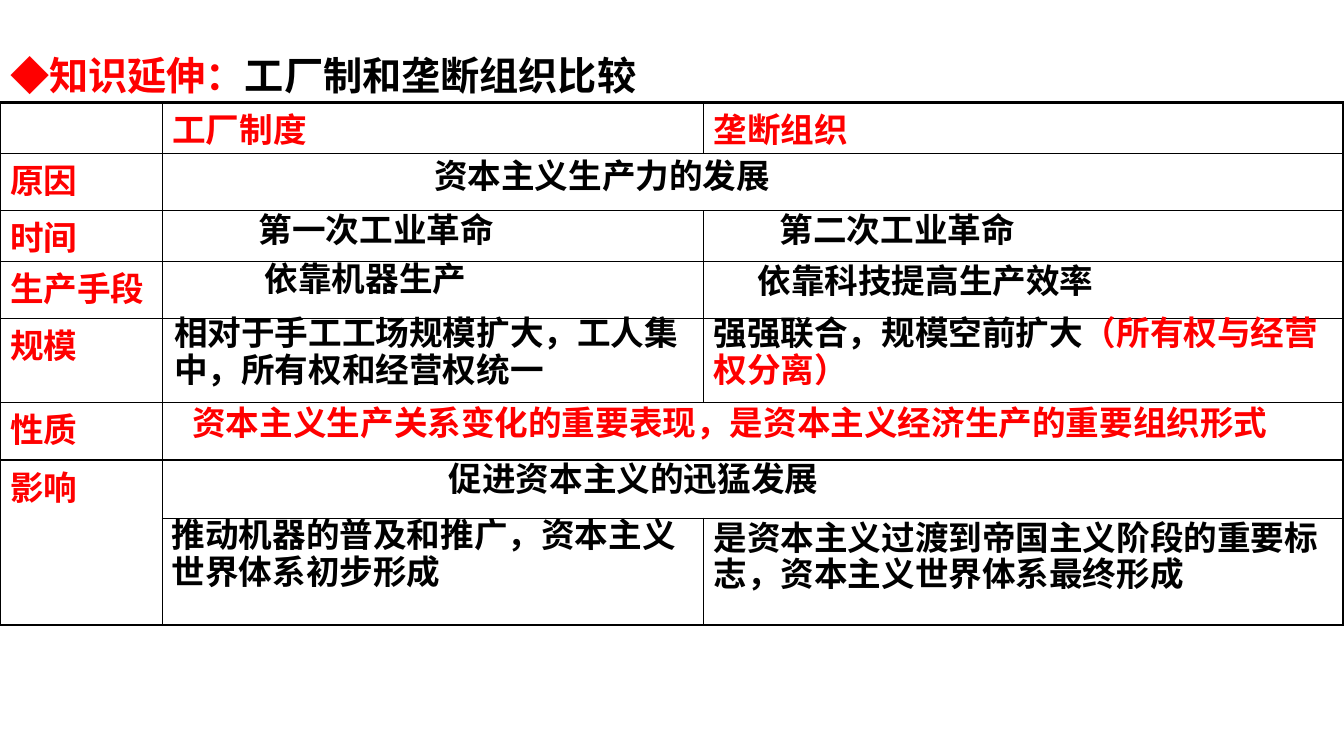
from lxml.etree import SubElement
from pptx import Presentation
from pptx.dml.color import RGBColor
from pptx.enum.text import MSO_ANCHOR, MSO_AUTO_SIZE, PP_ALIGN
from pptx.oxml.ns import qn
from pptx.util import Cm, Pt

RED = RGBColor(0xFF, 0x00, 0x00)
BLACK = RGBColor(0x00, 0x00, 0x00)
LATIN = "Calibri"
CHINESE = "Noto Sans CJK SC"

COLUMN_WIDTHS = [4.09, 13.64, 16.13]
ROW_HEIGHTS = [1.27, 1.45, 1.27, 1.45, 2.11, 1.45, 1.47, 2.69]
HEADERS = ["工厂制度", "垄断组织"]
ROW_LABELS = ["原因", "时间", "生产手段", "规模", "性质", "影响"]
MERGES = [((1, 1), (1, 2)), ((5, 1), (5, 2)), ((6, 1), (6, 2)), ((6, 0), (7, 0))]

ONE_LINE, TWO_LINES = 1.17, 2.08
ENTRIES = [
    (10.69, 3.89, 11.4, ONE_LINE, [("资本主义生产力的发展", BLACK)]),
    (6.27, 5.26, 8, ONE_LINE, [("第一次工业革命", BLACK)]),
    (19.4, 5.26, 8.41, ONE_LINE, [("第二次工业革命", BLACK)]),
    (6.42, 6.48, 7.44, ONE_LINE, [("依靠机器生产", BLACK)]),
    (18.84, 6.53, 11, ONE_LINE, [("依靠科技提高生产效率", BLACK)]),
    (4.14, 7.86, 13.51, TWO_LINES,
     [("相对于手工工场规模扩大，工人集中，所有权和经营权统一", BLACK)]),
    (17.73, 7.86, 16.13, TWO_LINES,
     [("强强联合，规模空前扩大", BLACK), ("（所有权与经营权分离）", RED)]),
    (4.6, 10.11, 31.34, ONE_LINE,
     [("资本主义生产关系变化的重要表现，是资本主义经济生产的重要组织形式", RED)]),
    (11.06, 11.52, 16.21, ONE_LINE, [("促进资本主义的迅猛发展", BLACK)]),
    (4.08, 12.95, 13.72, TWO_LINES,
     [("推动机器的普及和推广，资本主义世界体系初步形成", BLACK)]),
    (17.73, 13.02, 16.13, TWO_LINES,
     [("是资本主义过渡到帝国主义阶段的重要标志，资本主义世界体系最终形成", BLACK)]),
]


def add_text(paragraph, text, color=BLACK, size=24, font=LATIN, before=0):
    paragraph.alignment = PP_ALIGN.LEFT
    paragraph.line_spacing = 0.9
    paragraph.space_before = Pt(before)
    run = paragraph.add_run()
    run.text = text
    run.font.size = Pt(size)
    run.font.bold = True
    run.font.name = font
    run.font.color.rgb = color
    SubElement(run.font._element, qn("a:ea"), typeface=CHINESE)


class ComparisonSlide:
    thin, thick = 1, 2.25

    def __init__(self, presentation):
        self.slide = presentation.slides.add_slide(presentation.slide_layouts[5])

    def place(self, shape, left, top, width, height):
        shape.left, shape.top = Cm(left), Cm(top)
        shape.width, shape.height = Cm(width), Cm(height)
        frame = shape.text_frame
        frame.word_wrap = True
        frame.auto_size = MSO_AUTO_SIZE.SHAPE_TO_FIT_TEXT
        frame.vertical_anchor = MSO_ANCHOR.TOP
        return frame.paragraphs[0]

    def title(self, left, top, width, height):
        paragraph = self.place(self.slide.shapes.title, left, top, width, height)
        add_text(paragraph, "◆知识延伸：", color=RED, size=28, before=14)
        add_text(paragraph, "工厂制和垄断组织比较", size=28, font=CHINESE, before=14)

    def text_box(self, left, top, width, height, runs):
        shape = self.slide.shapes.add_textbox(0, 0, Cm(width), Cm(height))
        paragraph = self.place(shape, left, top, width, height)
        for text, color in runs:
            add_text(paragraph, text, color=color)

    def border(self, cell, row, column):
        outer_edges = {
            "a:lnL": column == 0,
            "a:lnR": column + cell.span_width == len(COLUMN_WIDTHS),
            "a:lnT": row == 0,
            "a:lnB": row + cell.span_height == len(ROW_HEIGHTS),
        }
        properties = cell._tc.get_or_add_tcPr()
        for tag, is_outer in outer_edges.items():
            width = Pt(self.thick if is_outer else self.thin)
            line = SubElement(properties, qn(tag), w=str(width))
            fill = SubElement(line, qn("a:solidFill"))
            SubElement(fill, qn("a:srgbClr"), val=str(BLACK))

    def table(self, left, top):
        table = self.slide.shapes.add_table(
            len(ROW_HEIGHTS), len(COLUMN_WIDTHS), Cm(left), Cm(top),
            Cm(sum(COLUMN_WIDTHS)), Cm(sum(ROW_HEIGHTS))).table
        table.first_row = table.horz_banding = False
        for column, width in zip(table.columns, COLUMN_WIDTHS):
            column.width = Cm(width)
        for row, height in zip(table.rows, ROW_HEIGHTS):
            row.height = Cm(height)
        for start, end in MERGES:
            table.cell(*start).merge(table.cell(*end))
        for row in range(len(ROW_HEIGHTS)):
            for column in range(len(COLUMN_WIDTHS)):
                cell = table.cell(row, column)
                self.border(cell, row, column)
                cell.fill.background()
        for column, text in enumerate(HEADERS, start=1):
            paragraph = table.cell(0, column).text_frame.paragraphs[0]
            add_text(paragraph, text, color=RED, font=CHINESE, before=10)
        for row, text in enumerate(ROW_LABELS, start=1):
            paragraph = table.cell(row, 0).text_frame.paragraphs[0]
            add_text(paragraph, text, color=RED, before=10)


def main():
    presentation = Presentation()
    presentation.slide_width, presentation.slide_height = Cm(33.87), Cm(19.05)
    comparison = ComparisonSlide(presentation)
    comparison.table(0, 2.59)
    for entry in ENTRIES:
        comparison.text_box(*entry)
    comparison.title(0, 1.3, 20.42, 1.32)
    presentation.save("out.pptx")


if __name__ == "__main__":
    main()
